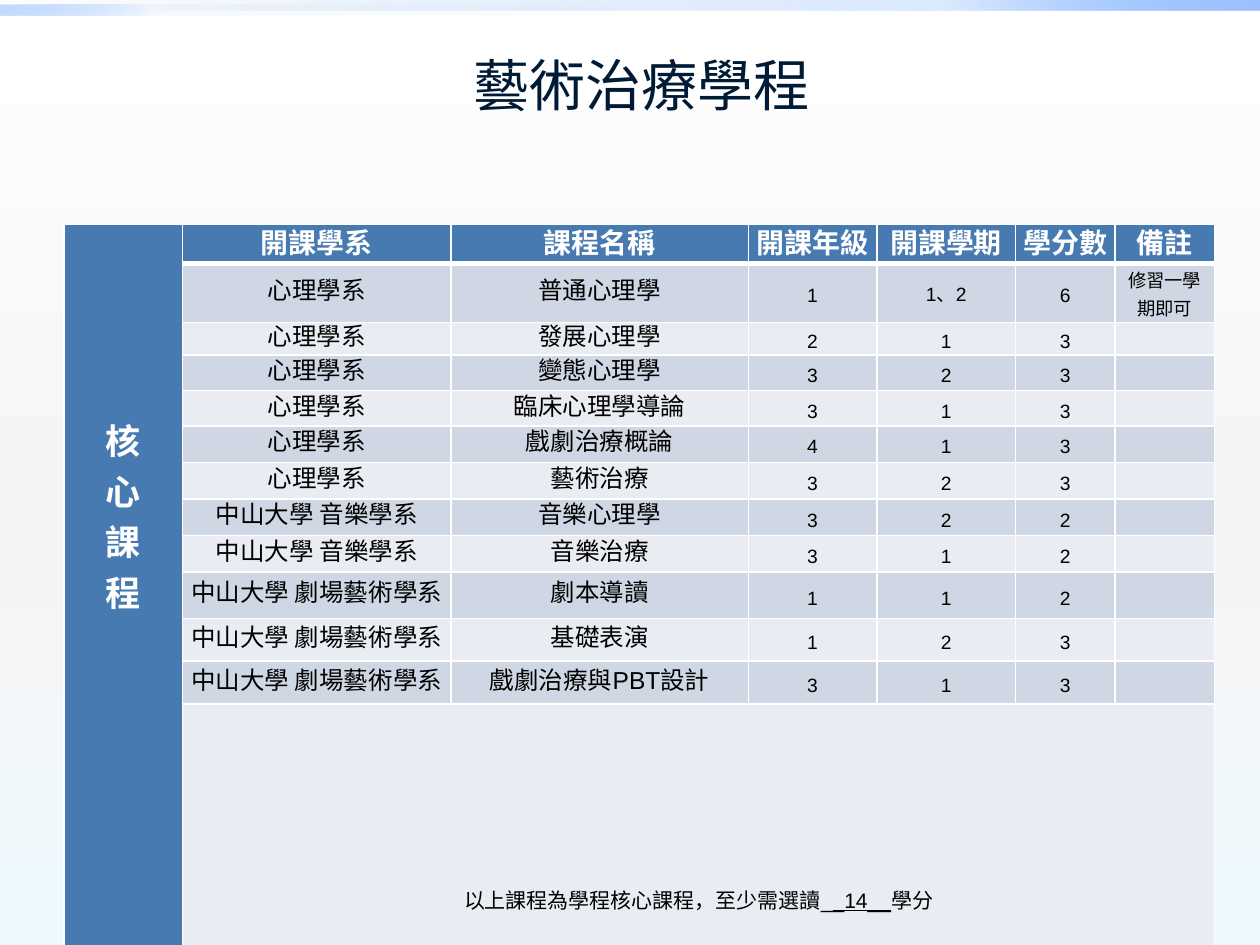
from lxml.etree import SubElement
from pptx import Presentation
from pptx.dml.color import RGBColor
from pptx.enum.shapes import MSO_SHAPE
from pptx.enum.text import MSO_ANCHOR, PP_ALIGN
from pptx.oxml.ns import qn
from pptx.util import Inches, Pt

WHITE = RGBColor(0xFF, 0xFF, 0xFF)
BLACK = RGBColor(0x00, 0x00, 0x00)
NAVY = RGBColor(0x00, 0x1B, 0x36)
HEADER_BLUE = RGBColor(0x47, 0x7A, 0xB1)
BAND_DARK = RGBColor(0xCF, 0xD7, 0xE4)
BAND_LIGHT = RGBColor(0xE9, 0xEC, 0xF2)
PAPER_GREY = RGBColor(0xF4, 0xF4, 0xF4)
PAPER_BLUE = RGBColor(0xEE, 0xF9, 0xFF)
DEEP_BLUE = RGBColor(0x00, 0x58, 0xB7)
BRIGHT_BLUE = RGBColor(0x4F, 0x95, 0xFF)
PALE_BLUE = RGBColor(0x9E, 0xC2, 0xFF)

# The slide is a grid of 1000 columns by 750 rows
GRID_COLUMNS, GRID_ROWS = 1000, 750
COLUMN_WIDTHS = [94, 213, 236, 102, 110, 79, 79]
ROW_HEIGHTS = [31, 47, 26, 28, 28, 29, 29, 29, 29, 37, 34, 34, 29]

HEADINGS = ["開課學系", "課程名稱", "開課年級", "開課學期", "學分數", "備註"]
PSYCHOLOGY = "心理學系"
MUSIC = "中山大學 音樂學系"
THEATRE = "中山大學 劇場藝術學系"
COURSES = [
    (PSYCHOLOGY, "普通心理學", "1", "1、2", "6", "修習一學期即可"),
    (PSYCHOLOGY, "發展心理學", "2", "1", "3", ""),
    (PSYCHOLOGY, "變態心理學", "3", "2", "3", ""),
    (PSYCHOLOGY, "臨床心理學導論", "3", "1", "3", ""),
    (PSYCHOLOGY, "戲劇治療概論", "4", "1", "3", ""),
    (PSYCHOLOGY, "藝術治療", "3", "2", "3", ""),
    (MUSIC, "音樂心理學", "3", "2", "2", ""),
    (MUSIC, "音樂治療", "3", "1", "2", ""),
    (THEATRE, "劇本導讀", "1", "1", "2", ""),
    (THEATRE, "基礎表演", "1", "2", "3", ""),
    (THEATRE, "戲劇治療與PBT設計", "3", "1", "3", ""),
]
COURSE_SIZES = [14, 14, 11, 11, 11, 10.5]
CREDIT_NOTE = [("以上課程為學程核心課程，至少需選讀_", False), ("_14__", True), ("學分", False)]


class SlideBuilder:
    title_font = "Lato"
    body_font = "Arial"

    def __init__(self, presentation):
        self.column = presentation.slide_width / GRID_COLUMNS
        self.row = presentation.slide_height / GRID_ROWS
        self.slide = presentation.slides.add_slide(presentation.slide_layouts[6])

    def box(self, left, top, width, height):
        return (round(left * self.column), round(top * self.row),
                round(width * self.column), round(height * self.row))

    def gradient(self, fill, stops, angle):
        """Stops are (position %, colour, opacity %); the angle runs clockwise."""
        fill.gradient()
        fill.gradient_angle = -angle % 360
        stop_list = fill.gradient_stops[0]._gs.getparent()
        for stop in list(stop_list):
            stop_list.remove(stop)
        for position, colour, opacity in stops:
            stop = SubElement(stop_list, qn("a:gs"), pos=str(position * 1000))
            colour_element = SubElement(stop, qn("a:srgbClr"), val=str(colour))
            if opacity < 100:
                SubElement(colour_element, qn("a:alpha"), val=str(opacity * 1000))

    def background(self, stops, angle):
        self.gradient(self.slide.background.fill, stops, angle)

    def band(self, area, stops, angle):
        shape = self.slide.shapes.add_shape(MSO_SHAPE.RECTANGLE, *self.box(*area))
        shape.shadow.inherit = False
        shape.line.fill.background()
        self.gradient(shape.fill, stops, angle)

    def title(self, area, text):
        frame = self.slide.shapes.add_textbox(*self.box(*area)).text_frame
        frame.word_wrap = True
        frame.vertical_anchor = MSO_ANCHOR.MIDDLE
        paragraph = frame.paragraphs[0]
        paragraph.text = text
        paragraph.alignment = PP_ALIGN.CENTER
        self.style(paragraph.font, 32, NAVY, name=self.title_font)

    def style(self, font, size, colour, bold=False, name=body_font):
        font.name, font.size, font.bold = name, Pt(size), bold
        font.color.rgb = colour

    def table(self, left, top, widths, heights):
        area = self.box(left, top, sum(widths), sum(heights))
        table = self.slide.shapes.add_table(len(heights), len(widths), *area).table
        for column, width in zip(table.columns, widths):
            column.width = round(width * self.column)
        for row, height in zip(table.rows, heights):
            row.height = round(height * self.row)
        return table

    def cell(self, cell, lines, size, fill, spacing=16, colour=BLACK, bold=False, bottom=1):
        """Each line is a list of (text, underlined) runs."""
        cell.margin_left = cell.margin_right = Inches(0.04)
        cell.margin_top = cell.margin_bottom = 0
        cell.vertical_anchor = MSO_ANCHOR.MIDDLE
        properties = cell._tc.get_or_add_tcPr()
        for side, width in (("lnL", 1), ("lnR", 1), ("lnT", 1), ("lnB", bottom)):
            line = SubElement(properties, qn(f"a:{side}"), w=str(Pt(width)))
            solid = SubElement(line, qn("a:solidFill"))
            SubElement(solid, qn("a:srgbClr"), val=str(WHITE))
        cell.fill.solid()
        cell.fill.fore_color.rgb = fill
        frame = cell.text_frame
        for index, runs in enumerate(lines):
            paragraph = frame.add_paragraph() if index else frame.paragraphs[0]
            paragraph.alignment = PP_ALIGN.CENTER
            paragraph.line_spacing = Pt(spacing)
            paragraph.space_before = Pt(12 if index else 0)
            self.style(paragraph.font, size, colour, bold)
            for text, underlined in runs:
                if text:
                    run = paragraph.add_run()
                    run.text = text
                    if underlined:
                        run.font.underline = True


def main():
    presentation = Presentation()
    presentation.slide_width, presentation.slide_height = Inches(10), Inches(7.5)
    builder = SlideBuilder(presentation)

    # Background and top bands
    builder.background([(0, WHITE, 100), (55, PAPER_GREY, 100), (100, PAPER_BLUE, 100)], 90)
    builder.band((0, 0, 1000, 8),
                 [(0, DEEP_BLUE, 0), (75, BRIGHT_BLUE, 20), (100, PALE_BLUE, 100)], 315)
    builder.band((0, 4, 500, 8),
                 [(0, DEEP_BLUE, 0), (75, BRIGHT_BLUE, 5), (100, PALE_BLUE, 60)], 135)

    # Course table: side heading, header row, courses
    table = builder.table(51, 178, COLUMN_WIDTHS, ROW_HEIGHTS)
    last_row = len(ROW_HEIGHTS) - 1
    side = table.cell(0, 0)
    side.merge(table.cell(last_row, 0))
    builder.cell(side, [[(letter, False)] for letter in "核心課程"], 20, HEADER_BLUE,
                 spacing=17, colour=WHITE, bold=True, bottom=3)
    side.vertical_anchor = MSO_ANCHOR.TOP
    side.margin_top = Inches(1.67)

    for column, heading in enumerate(HEADINGS, start=1):
        builder.cell(table.cell(0, column), [[(heading, False)]], 16, HEADER_BLUE,
                     spacing=20, colour=WHITE, bold=True, bottom=3)
    for row, course in enumerate(COURSES, start=1):
        fill = BAND_DARK if row % 2 else BAND_LIGHT
        for column, (text, size) in enumerate(zip(course, COURSE_SIZES), start=1):
            builder.cell(table.cell(row, column), [[(text, False)]], size, fill)

    # Credit note across the last row
    note = table.cell(last_row, 1)
    note.merge(table.cell(last_row, len(HEADINGS)))
    builder.cell(note, [CREDIT_NOTE], 12, BAND_LIGHT)

    builder.title((59, 4, 900, 125), "藝術治療學程")
    presentation.save("out.pptx")


if __name__ == "__main__":
    main()
